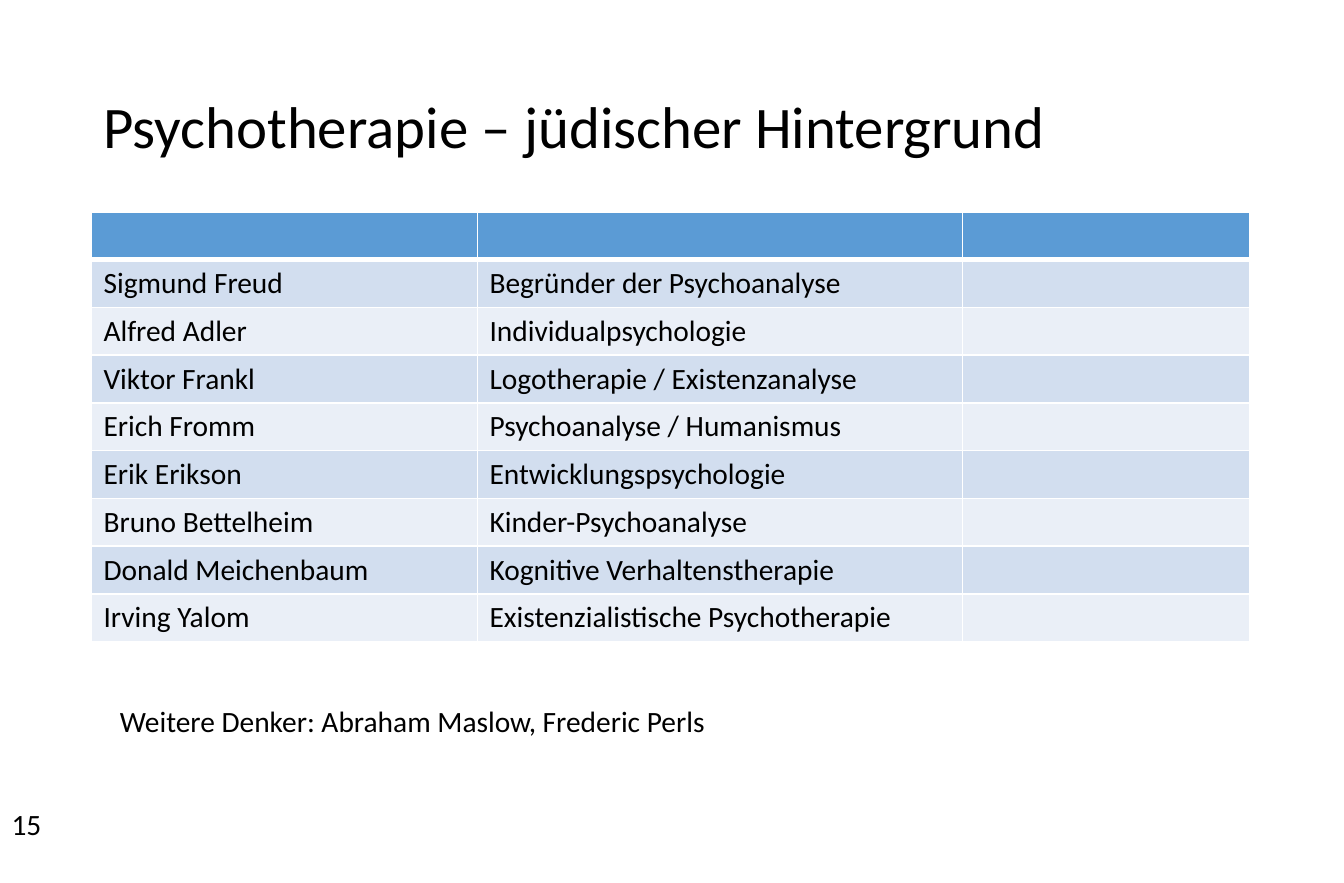
from dataclasses import dataclass
from typing import NamedTuple

from lxml import etree
from pptx import Presentation
from pptx.dml.color import RGBColor
from pptx.enum.text import MSO_ANCHOR
from pptx.oxml.ns import qn
from pptx.util import Inches, Pt

TOP, MIDDLE = MSO_ANCHOR.TOP, MSO_ANCHOR.MIDDLE


@dataclass(frozen=True)
class Theme:
    font: str = "Calibri"
    title_size: int = 36
    body_size: int = 18
    text: str = "000000"
    header: str = "5B9BD5"
    bands: tuple[str, str] = ("D2DEEF", "EAEFF7")
    border: str = "FFFFFF"
    border_width: int = 1
    header_border_width: int = 3


class Box(NamedTuple):
    left: float
    top: float
    width: float
    height: float


class Thinker(NamedTuple):
    name: str
    field: str


THEME = Theme()
TITLE_BOX = Box(0.78, 0.69, 10.28, 0.82)
TABLE_BOX = Box(0.78, 1.8, 9.84, 3.65)
NOTE_BOX = Box(0.92, 5.92, 8.99, 0.4)
NUMBER_BOX = Box(0, 6.8, 1.23, 0.55)
COLUMN_WIDTHS = (3.28, 4.12, 2.44)
THINKERS = (
    Thinker("Sigmund Freud", "Begründer der Psychoanalyse"),
    Thinker("Alfred Adler", "Individualpsychologie"),
    Thinker("Viktor Frankl", "Logotherapie / Existenzanalyse"),
    Thinker("Erich Fromm", "Psychoanalyse / Humanismus"),
    Thinker("Erik Erikson", "Entwicklungspsychologie"),
    Thinker("Bruno Bettelheim", "Kinder-Psychoanalyse"),
    Thinker("Donald Meichenbaum", "Kognitive Verhaltenstherapie"),
    Thinker("Irving Yalom", "Existenzialistische Psychotherapie"),
)


def write_text(text_frame, text: str, *, size: int = THEME.body_size,
               line_spacing: float = 1.0) -> None:
    paragraph = text_frame.paragraphs[0]
    paragraph.text = text
    paragraph.line_spacing = line_spacing
    paragraph.font.name = THEME.font
    paragraph.font.size = Pt(size)
    paragraph.font.color.rgb = RGBColor.from_string(THEME.text)


def add_text_box(slide, box: Box, text: str, *, anchor=TOP, **text_format) -> None:
    text_frame = slide.shapes.add_textbox(*map(Inches, box)).text_frame
    text_frame.word_wrap = True
    text_frame.vertical_anchor = anchor
    write_text(text_frame, text, **text_format)


def style_cell(cell, fill: str, bottom_width: int) -> None:
    """Set the cell's four borders, then its fill, in schema order."""
    properties = cell._tc.get_or_add_tcPr()
    for side in "LRTB":
        width = bottom_width if side == "B" else THEME.border_width
        line = etree.SubElement(properties, qn(f"a:ln{side}"), w=str(Pt(width)))
        solid_fill = etree.SubElement(line, qn("a:solidFill"))
        etree.SubElement(solid_fill, qn("a:srgbClr"), val=THEME.border)
    cell.fill.solid()
    cell.fill.fore_color.rgb = RGBColor.from_string(fill)


def add_thinker_table(slide) -> None:
    table = slide.shapes.add_table(
        len(THINKERS) + 1, len(COLUMN_WIDTHS), *map(Inches, TABLE_BOX)).table
    for column, width in zip(table.columns, COLUMN_WIDTHS):
        column.width = Inches(width)
    for cell in table.rows[0].cells:
        style_cell(cell, THEME.header, THEME.header_border_width)
    for index, thinker in enumerate(THINKERS):
        cells = list(table.rows[index + 1].cells)
        for cell in cells:
            style_cell(cell, THEME.bands[index % 2], THEME.border_width)
        for cell, text in zip(cells, thinker):
            write_text(cell.text_frame, text)


def main() -> None:
    presentation = Presentation()
    presentation.slide_width = Inches(11.42)
    presentation.slide_height = Inches(7.5)
    slide = presentation.slides.add_slide(presentation.slide_layouts[6])
    add_text_box(slide, TITLE_BOX, "Psychotherapie – jüdischer Hintergrund",
                 anchor=MIDDLE, size=THEME.title_size, line_spacing=0.9)
    add_thinker_table(slide)
    add_text_box(slide, NUMBER_BOX, "15")
    add_text_box(slide, NOTE_BOX, "Weitere Denker: Abraham Maslow, Frederic Perls")
    presentation.save("out.pptx")


if __name__ == "__main__":
    main()
